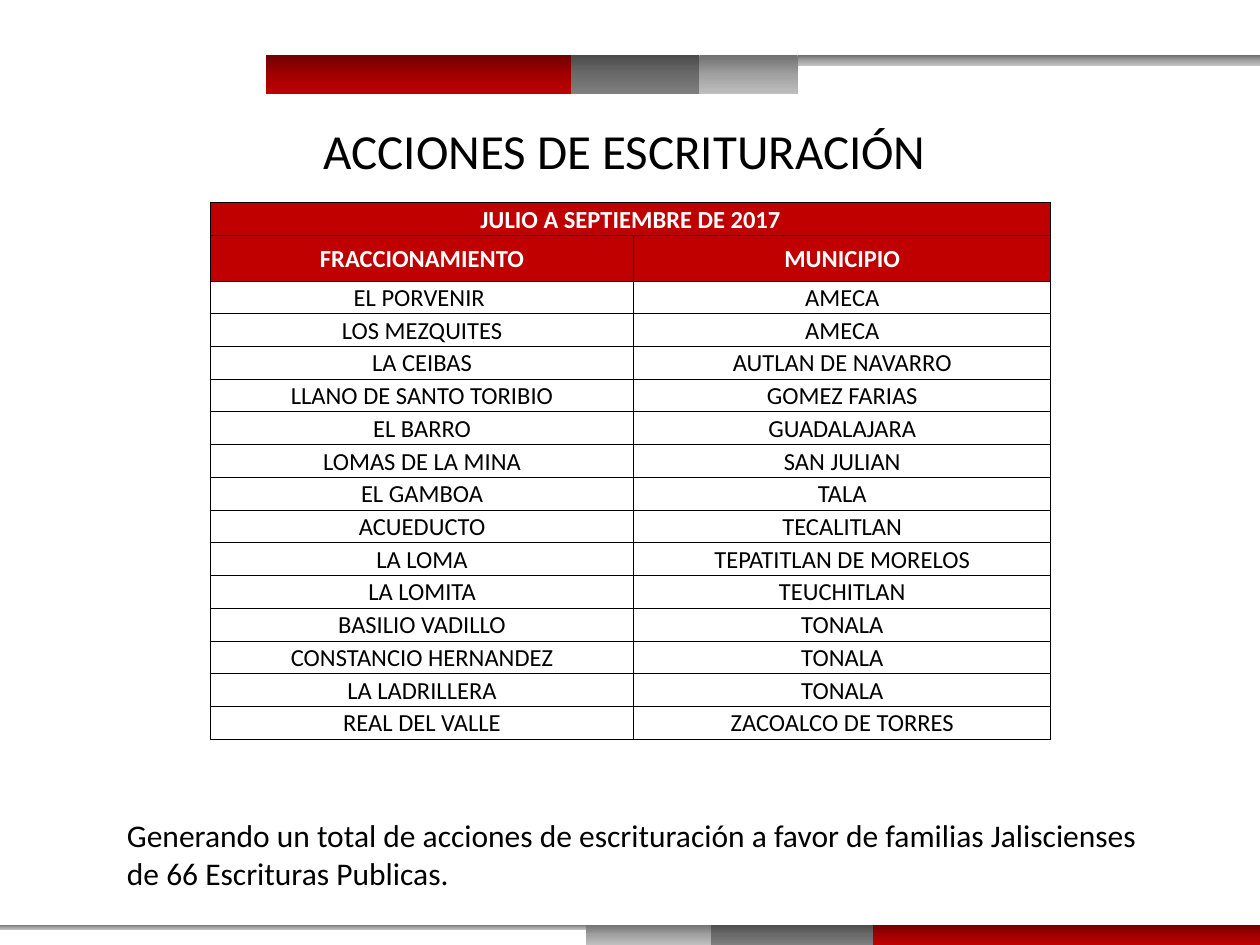
"""Builds the slide listing title-deed actions for July to September 2017."""
from copy import deepcopy
from dataclasses import dataclass

from lxml import etree
from pptx import Presentation
from pptx.dml.color import RGBColor
from pptx.enum.shapes import MSO_SHAPE
from pptx.enum.text import MSO_ANCHOR, PP_ALIGN
from pptx.oxml.ns import qn
from pptx.util import Inches, Pt

RECTANGLE = MSO_SHAPE.RECTANGLE
MIDDLE = MSO_ANCHOR.MIDDLE
CENTER = PP_ALIGN.CENTER
LEFT = PP_ALIGN.LEFT


@dataclass(frozen=True)
class Theme:
    """Colours, gradients and type sizes of the slide."""
    font: str = "Calibri"
    ink: str = "000000"
    header_ink: str = "FFFFFF"
    header_fill: str = "C00000"
    red: tuple = ("720000", "A20000", "C00000")
    dark: tuple = ("4C4C4C", "6B6B6B", "808080")
    light: tuple = ("717171", "A1A1A1", "BFBFBF")
    title_size: int = 28
    note_size: int = 18
    table_size: int = 14
    border: float = 0.5


THEME = Theme()
TITLE = "ACCIONES DE ESCRITURACIÓN "
NOTE = ("Generando un total de acciones de escrituración a favor de familias "
        "Jaliscienses de 66 Escrituras Publicas.")
PERIOD = "JULIO A SEPTIEMBRE DE 2017"
HEADINGS = ("FRACCIONAMIENTO", "MUNICIPIO")
DEEDS = (
    ("EL PORVENIR ", "AMECA"),
    ("LOS MEZQUITES", "AMECA"),
    ("LA CEIBAS", "AUTLAN DE NAVARRO"),
    ("LLANO DE SANTO TORIBIO", "GOMEZ FARIAS"),
    ("EL BARRO", "GUADALAJARA"),
    ("LOMAS DE LA MINA", "SAN JULIAN"),
    ("EL GAMBOA", "TALA"),
    ("ACUEDUCTO", "TECALITLAN"),
    ("LA LOMA", "TEPATITLAN DE MORELOS"),
    ("LA LOMITA", "TEUCHITLAN"),
    ("BASILIO VADILLO", "TONALA"),
    ("CONSTANCIO HERNANDEZ", "TONALA"),
    ("LA LADRILLERA", "TONALA"),
    ("REAL DEL VALLE", "ZACOALCO DE TORRES"),
)
COLUMN_WIDTHS = (3.36, 3.31)
ROW_HEIGHT = 0.26
HEADING_HEIGHT = 0.36
TOP_BAND = (
    (2.11, 2.5, 0.31, THEME.red),
    (4.53, 1.02, 0.31, THEME.dark),
    (5.55, 0.78, 0.31, THEME.light),
    (6.33, 3.67, 0.08, THEME.light),
)
BOTTOM_BAND = (
    (6.83, 3.17, 0.16, THEME.red),
    (5.64, 1.29, 0.16, THEME.dark),
    (4.65, 0.99, 0.16, THEME.light),
    (0, 4.65, 0.04, THEME.light),
)


def write(frame, text, size, color, align, bold=False):
    """Put one formatted paragraph into a text frame."""
    frame.word_wrap = True
    paragraph = frame.paragraphs[0]
    paragraph.text = text
    paragraph.alignment = align
    paragraph.font.name = THEME.font
    paragraph.font.size = Pt(size)
    paragraph.font.bold = bold
    paragraph.font.color.rgb = RGBColor.from_string(color)


def add_title(slide):
    """Place and format the title placeholder."""
    title = slide.shapes.title
    title.left, title.top = Inches(0.75), Inches(0.6)
    title.width, title.height = Inches(8.5), Inches(1.18)
    title.text_frame.vertical_anchor = MIDDLE
    write(title.text_frame, TITLE, THEME.title_size, THEME.ink, CENTER)


def add_note(slide):
    """Add the closing sentence with the total."""
    note = slide.shapes.add_textbox(Inches(0.91), Inches(6.43), Inches(8.27), Inches(0.71))
    write(note.text_frame, NOTE, THEME.note_size, THEME.ink, LEFT)


def fill_gradient(shape, colors):
    """Fill a shape from top to bottom with three evenly spaced colours."""
    shape.fill.gradient()
    shape.fill.gradient_angle = 270
    stop_list = next(shape._element.iter(qn("a:gsLst")))
    stop_list.append(deepcopy(stop_list[-1]))
    for index, (stop, color) in enumerate(zip(shape.fill.gradient_stops, colors)):
        stop.position = index / 2
        stop.color.rgb = RGBColor.from_string(color)


def add_band(slide, top, segments):
    """Add a grouped decorative band of gradient bars."""
    band = slide.shapes.add_group_shape()
    for left, width, height, colors in segments:
        bar = band.shapes.add_shape(
            RECTANGLE, Inches(left), Inches(top), Inches(width), Inches(height))
        bar.shadow.inherit = False
        bar.line.fill.background()
        fill_gradient(bar, colors)


def set_borders(cell):
    """Draw a thin line on all four sides of a cell."""
    properties = cell._tc.get_or_add_tcPr()
    for index, side in enumerate(("a:lnL", "a:lnR", "a:lnT", "a:lnB")):
        line = etree.Element(qn(side), w=str(Pt(THEME.border)))
        solid = etree.SubElement(line, qn("a:solidFill"))
        etree.SubElement(solid, qn("a:srgbClr"), val=THEME.ink)
        properties.insert(index, line)


def format_cell(cell, text, is_header):
    """Write one table cell in header or body style."""
    cell.margin_left = cell.margin_right = cell.margin_top = Inches(0.01)
    cell.margin_bottom = 0
    cell.vertical_anchor = MIDDLE
    if is_header:
        cell.fill.solid()
        cell.fill.fore_color.rgb = RGBColor.from_string(THEME.header_fill)
    else:
        cell.fill.background()
    set_borders(cell)
    color = THEME.header_ink if is_header else THEME.ink
    write(cell.text_frame, text, THEME.table_size, color, CENTER, is_header)


def add_deeds_table(slide):
    """Add the table of developments and municipalities."""
    rows = ((PERIOD, ""), HEADINGS) + DEEDS
    heights = [ROW_HEIGHT, HEADING_HEIGHT] + [ROW_HEIGHT] * len(DEEDS)
    table = slide.shapes.add_table(
        len(rows), len(HEADINGS), Inches(1.67), Inches(1.61),
        Inches(sum(COLUMN_WIDTHS)), Inches(sum(heights))).table
    for column, width in zip(table.columns, COLUMN_WIDTHS):
        column.width = Inches(width)
    for row_index, (texts, height) in enumerate(zip(rows, heights)):
        table.rows[row_index].height = Inches(height)
        for column_index, text in enumerate(texts):
            format_cell(table.cell(row_index, column_index), text, row_index < 2)
    table.cell(0, 0).merge(table.cell(0, 1))


def main():
    """Build and save the slide."""
    deck = Presentation()
    deck.slide_width, deck.slide_height = Inches(10), Inches(7.5)
    slide = deck.slides.add_slide(deck.slide_layouts[5])
    add_title(slide)
    add_note(slide)
    add_band(slide, 0.44, TOP_BAND)
    add_band(slide, 7.34, BOTTOM_BAND)
    add_deeds_table(slide)
    deck.save("out.pptx")


if __name__ == "__main__":
    main()
